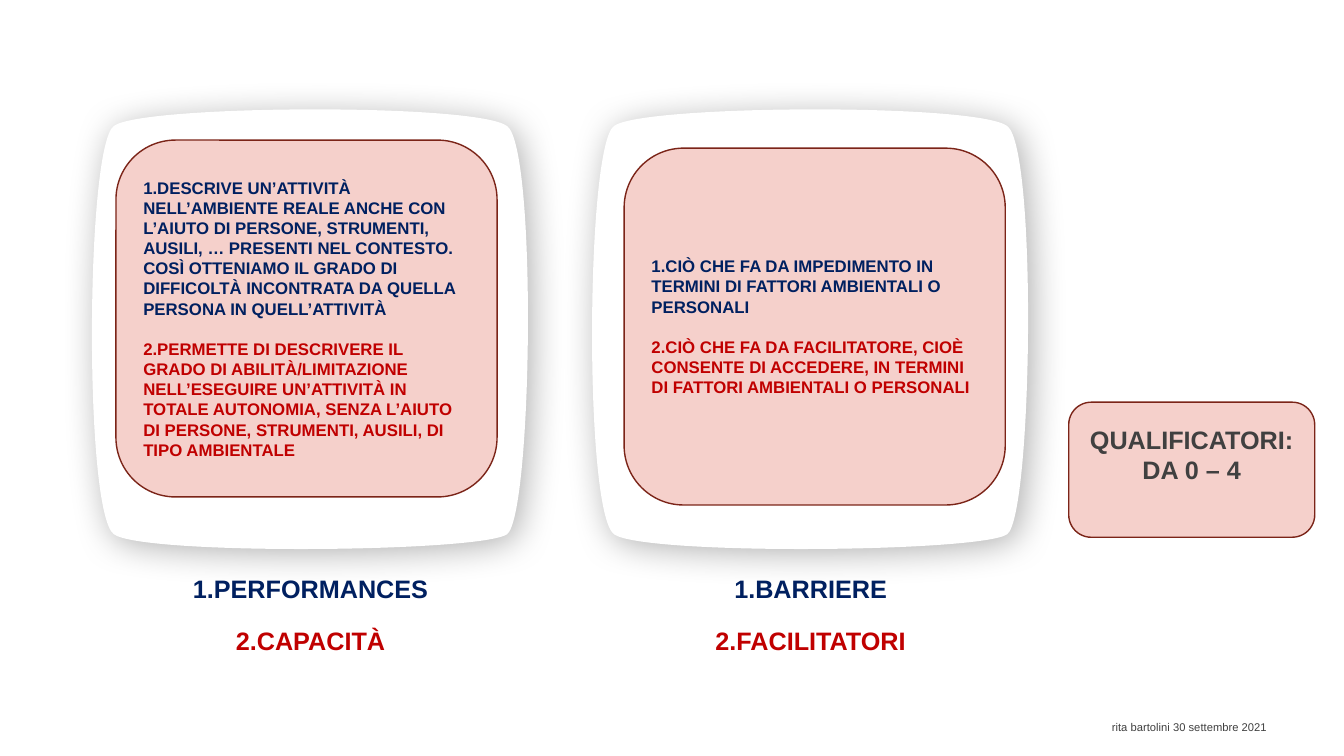
from lxml import etree
from pptx import Presentation
from pptx.dml.color import RGBColor
from pptx.enum.shapes import MSO_SHAPE
from pptx.enum.text import MSO_ANCHOR, PP_ALIGN
from pptx.oxml.ns import qn
from pptx.util import Inches, Pt

ROUND = MSO_SHAPE.ROUNDED_RECTANGLE
MIDDLE, TOP = MSO_ANCHOR.MIDDLE, MSO_ANCHOR.TOP
LEFT, CENTER = PP_ALIGN.LEFT, PP_ALIGN.CENTER

COLORS = {"navy": "002060", "red": "C00000", "gray": "404040",
          "pink": "F5D0CB", "brown": "7B2418", "white": "FFFFFF", "black": "000000"}
FONT = "Arial"

# Each column: card offset in its column and card top, card text, caption
COLUMNS = [
    {"card": (0.02, 1.39),
     "text": [("1.DESCRIVE UN’ATTIVITÀ NELL’AMBIENTE REALE ANCHE CON L’AIUTO DI PERSONE, "
               "STRUMENTI, AUSILI, … PRESENTI NEL CONTESTO. COSÌ OTTENIAMO IL GRADO DI "
               "DIFFICOLTÀ INCONTRATA DA QUELLA PERSONA IN QUELL’ATTIVITÀ", "navy"),
              ("2.PERMETTE DI DESCRIVERE IL GRADO DI ABILITÀ/LIMITAZIONE NELL’ESEGUIRE "
               "UN’ATTIVITÀ IN TOTALE AUTONOMIA, SENZA L’AIUTO DI PERSONE, STRUMENTI, "
               "AUSILI, DI TIPO AMBIENTALE", "red")],
     "caption": [("1.PERFORMANCES", "navy"), ("2.CAPACITÀ", "red")]},
    {"card": (0.1, 1.47),
     "text": [("1.CIÒ CHE FA DA IMPEDIMENTO IN TERMINI DI FATTORI AMBIENTALI O PERSONALI",
               "navy"),
              ("2.CIÒ CHE FA DA FACILITATORE, CIOÈ CONSENTE DI ACCEDERE, IN TERMINI DI "
               "FATTORI AMBIENTALI O PERSONALI", "red")],
     "caption": [("1.BARRIERE", "navy"), ("2.FACILITATORI", "red")]},
]
SCALE = [("QUALIFICATORI:", "gray"), ("DA 0 – 4", "gray")]
FOOTER = [("rita bartolini 30 settembre 2021", "gray")]

COL_X, PITCH = 1.13, 4.96
CARD_W, CARD_H = 3.78, 3.54
# Bulging frame: start point, then three points per Bezier curve, from the column's left
START = (3.9, 1.25)
CURVES = [(4.2, 1.47), (4.15, 5.11), (3.9, 5.3),
          (3.64, 5.48), (0.29, 5.51), (0, 5.3),
          (-0.3, 5.08), (-0.28, 1.45), (0, 1.25),
          (0.27, 1.04), (3.59, 1.02), START]


def rgb(name):
    return RGBColor.from_string(COLORS[name])


def bend(shape):
    """Turn every three line segments of the outline into one Bezier curve."""
    lines = list(shape._element.iter(qn("a:lnTo")))
    for i in range(0, len(CURVES), 3):
        curve = etree.Element(qn("a:cubicBezTo"))
        lines[i].addprevious(curve)
        for line in lines[i:i + 3]:
            curve.append(line[0])
            line.getparent().remove(line)


def add_glow(shape):
    """Give the shape a soft outer shadow."""
    shape.shadow.inherit = False
    effects = shape._element.spPr.find(qn("a:effectLst"))
    outer = etree.SubElement(effects, qn("a:outerShdw"), blurRad=str(Pt(25)),
                             dist=str(Pt(5)), dir=str(45 * 60000), rotWithShape="0")
    color = etree.SubElement(outer, qn("a:srgbClr"), val=COLORS["black"])
    etree.SubElement(color, qn("a:alpha"), val="30000")


def add_frame(slide, x):
    def place(point):
        return Inches(x + point[0]), Inches(point[1])

    pen = slide.shapes.build_freeform(*place(START))
    pen.add_line_segments([place(point) for point in CURVES], close=True)
    frame = pen.convert_to_shape()
    bend(frame)
    frame.fill.solid()
    frame.fill.fore_color.rgb = rgb("white")
    frame.line.fill.background()
    add_glow(frame)


def write(shape, lines, size, align=LEFT, anchor=TOP, bold=True, gap=0, spacing=1.0):
    frame = shape.text_frame
    frame.word_wrap = True
    frame.vertical_anchor = anchor
    frame.text = "\n".join(text for text, _ in lines)
    for i, (para, (_, color)) in enumerate(zip(frame.paragraphs, lines)):
        para.alignment = align
        para.line_spacing = spacing
        para.space_before = Pt(gap if i else 0)
        font = para.runs[0].font
        font.name, font.size, font.bold = FONT, Pt(size), bold
        font.color.rgb = rgb(color)


def add_card(slide, *box):
    card = slide.shapes.add_shape(ROUND, *map(Inches, box))
    card.shadow.inherit = False
    card.fill.solid()
    card.fill.fore_color.rgb = rgb("pink")
    card.line.color.rgb = rgb("brown")
    card.line.width = Pt(1)
    return card


def add_label(slide, *box):
    return slide.shapes.add_textbox(*map(Inches, box))


def main():
    deck = Presentation()
    deck.slide_width, deck.slide_height = Inches(13.33), Inches(7.5)
    slide = deck.slides.add_slide(deck.slide_layouts[6])

    for i, col in enumerate(COLUMNS):
        x = COL_X + i * PITCH
        add_frame(slide, x)
        dx, y = col["card"]
        card = add_card(slide, x + dx, y, CARD_W, CARD_H)
        write(card, col["text"], 12, anchor=MIDDLE, gap=14.4)
        label = add_label(slide, x, 5.67, 3.9, 1.3)
        write(label, col["caption"], 18, CENTER, gap=18, spacing=0.9)

    scale = add_card(slide, 10.6, 3.99, 2.44, 1.34)
    write(scale, SCALE, 18, CENTER, MIDDLE)
    scale.text_frame.margin_bottom = Inches(0.35)
    write(add_label(slide, 10.93, 7.1, 2.4, 0.4), FOOTER, 8, bold=False)
    deck.save("out.pptx")


if __name__ == "__main__":
    main()
